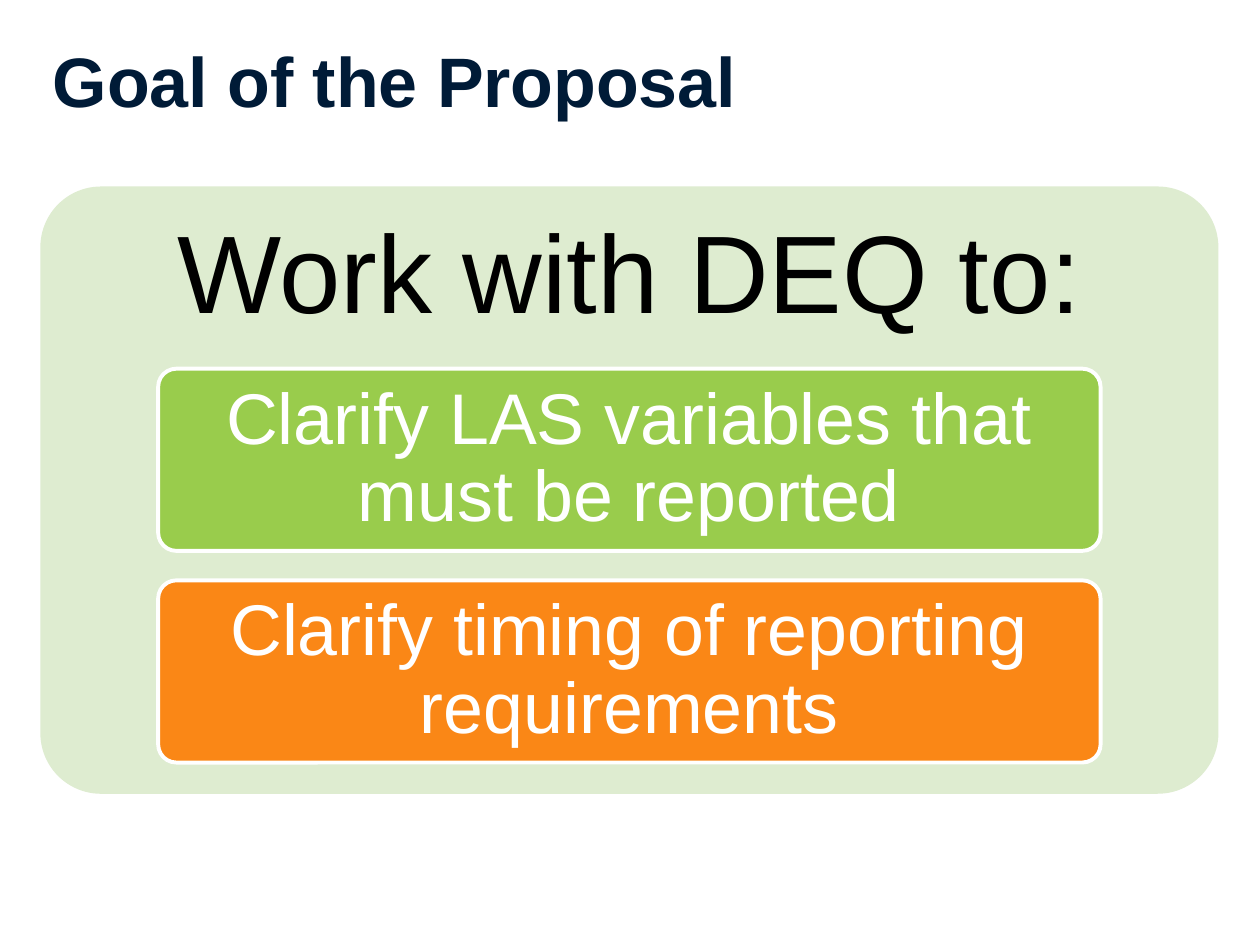
from dataclasses import dataclass

from pptx import Presentation
from pptx.dml.color import RGBColor
from pptx.enum.shapes import MSO_SHAPE as Preset
from pptx.enum.text import MSO_ANCHOR as Anchor, PP_ALIGN as Align
from pptx.shapes.autoshape import Shape
from pptx.slide import Slide
from pptx.util import Inches, Pt

SLIDE_WIDTH, SLIDE_HEIGHT = 10, 7.5
FONT = "Arial"
WHITE = "FFFFFF"


@dataclass(frozen=True)
class Box:
    """Lengths in inches on the slide."""
    left: float
    top: float
    width: float
    height: float

    def lengths(self) -> tuple:
        return tuple(map(Inches, (self.left, self.top, self.width, self.height)))


@dataclass(frozen=True)
class Card:
    text: str
    fill: str


PANEL = Box(0.32, 1.48, 9.35, 4.82)
ROW_HEIGHT = PANEL.height * 0.3
CARD_WIDTH = PANEL.width * 0.8
CARD_LEFT = PANEL.left + PANEL.width * 0.1
CARD_PITCH = 1.68
CARDS = [
    Card("Clarify LAS variables that must be reported", "99CC4C"),
    Card("Clarify timing of reporting requirements", "FA8716"),
]


def color(value: str) -> RGBColor:
    return RGBColor.from_string(value)


def write(shape: Shape, text: str, *, size: float, font_color: str,
          bold: bool = False, align: Align = Align.CENTER,
          line_spacing: float = 0.9, margin_x: float = 0.1,
          margin_y: float = 0.05) -> None:
    frame = shape.text_frame
    frame.word_wrap = True
    frame.vertical_anchor = Anchor.MIDDLE
    frame.margin_left = frame.margin_right = Inches(margin_x)
    frame.margin_top = frame.margin_bottom = Inches(margin_y)
    paragraph = frame.paragraphs[0]
    paragraph.alignment = align
    paragraph.line_spacing = line_spacing
    run = paragraph.add_run()
    run.text = text
    run.font.name = FONT
    run.font.size = Pt(size)
    run.font.bold = bold
    run.font.color.rgb = color(font_color)


def add_rounded(slide: Slide, box: Box, fill: str, line: str | None = None) -> Shape:
    shape = slide.shapes.add_shape(Preset.ROUNDED_RECTANGLE, *box.lengths())
    shape.adjustments[0] = 0.1
    shape.shadow.inherit = False
    shape.fill.solid()
    shape.fill.fore_color.rgb = color(fill)
    if line:
        shape.line.color.rgb = color(line)
        shape.line.width = Pt(2.25)
    else:
        shape.line.fill.background()
    return shape


def add_text(slide: Slide, box: Box, text: str, **text_format) -> None:
    write(slide.shapes.add_textbox(*box.lengths()), text, **text_format)


def main() -> None:
    presentation = Presentation()
    presentation.slide_width = Inches(SLIDE_WIDTH)
    presentation.slide_height = Inches(SLIDE_HEIGHT)
    slide = presentation.slides.add_slide(presentation.slide_layouts[6])

    add_rounded(slide, PANEL, "DEECD0")
    heading = Box(PANEL.left, PANEL.top, PANEL.width, ROW_HEIGHT)
    add_text(slide, heading, "Work with DEQ to:", size=63,
             font_color="000000", margin_x=0.26, margin_y=0.26)

    for row, card in enumerate(CARDS):
        top = PANEL.top + ROW_HEIGHT + row * CARD_PITCH
        box = Box(CARD_LEFT, top, CARD_WIDTH, ROW_HEIGHT)
        shape = add_rounded(slide, box, card.fill, line=WHITE)
        write(shape, card.text, size=41, font_color=WHITE,
              margin_x=0.11, margin_y=0.09)

    add_text(slide, Box(0.32, 0.17, 9.56, 0.93), "Goal of the Proposal",
             size=40, font_color="001B37", bold=True, align=Align.LEFT,
             line_spacing=1.0)

    presentation.save("out.pptx")


if __name__ == "__main__":
    main()
